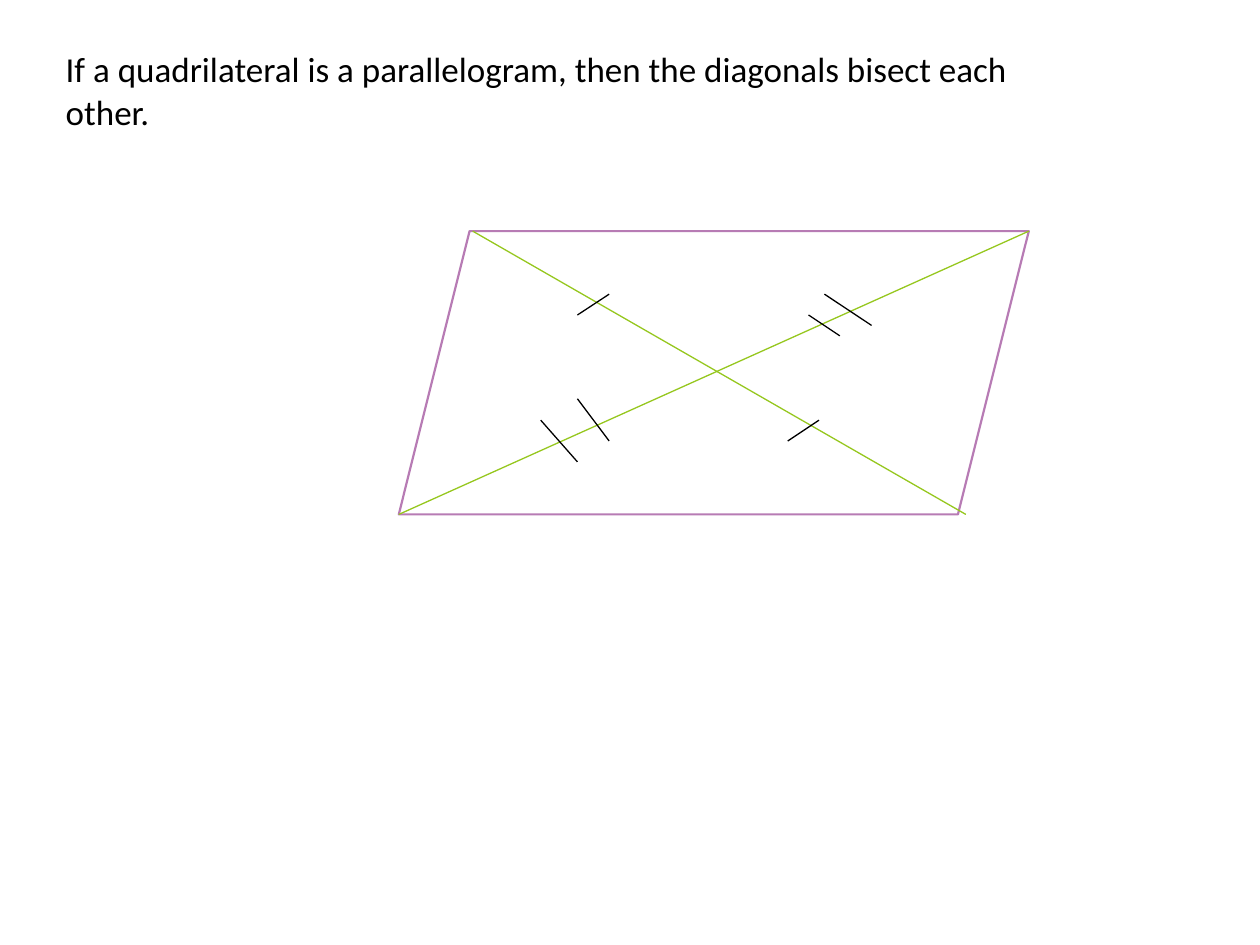
"""Builds a slide on the diagonals of a parallelogram."""
from lxml import etree
from pptx import Presentation
from pptx.dml.color import RGBColor
from pptx.enum.shapes import MSO_CONNECTOR, MSO_SHAPE
from pptx.enum.text import MSO_ANCHOR, MSO_AUTO_SIZE, PP_ALIGN
from pptx.oxml.ns import qn
from pptx.util import Cm, Pt

STRAIGHT = MSO_CONNECTOR.STRAIGHT
PARALLELOGRAM = MSO_SHAPE.PARALLELOGRAM
TOP = MSO_ANCHOR.TOP
NO_AUTOFIT = MSO_AUTO_SIZE.NONE
LEFT = PP_ALIGN.LEFT
TITLE_ONLY = 5

BLACK = "000000"
WHITE = "FFFFFF"
PURPLE = "B77BB4"
GREEN = "96C71E"


def color(value):
    """Return the colour for a hex string."""
    return RGBColor.from_string(value)


class Sketch:
    """Holds the text style and the current page."""

    def __init__(self, page, font="Calibri", size=20):
        """Keep the page and its text style."""
        self.page, self.font, self.size = page, font, size

    def title(self, text, left, top, width, height):
        """Place and format the title."""
        box = self.page.shapes.title
        box.left, box.top = Cm(left), Cm(top)
        box.width, box.height = Cm(width), Cm(height)
        frame = box.text_frame
        frame.text = text
        frame.word_wrap = True
        frame.auto_size = NO_AUTOFIT
        frame.vertical_anchor = TOP
        para = frame.paragraphs[0]
        para.alignment = LEFT
        para.font.name, para.font.size = self.font, Pt(self.size)
        para.font.color.rgb = color(BLACK)

    def parallelogram(self, left, top, width, height):
        """Draw the outlined parallelogram."""
        shape = self.page.shapes.add_shape(
            PARALLELOGRAM, Cm(left), Cm(top), Cm(width), Cm(height))
        shape.shadow.inherit = False
        shape.fill.solid()
        shape.fill.fore_color.rgb = color(WHITE)
        shape.line.color.rgb = color(PURPLE)
        shape.line.width = Pt(1.25)

    def line(self, ends, shade):
        """Draw a thin line between two points."""
        connector = self.page.shapes.add_connector(STRAIGHT, *map(Cm, ends))
        connector.line.color.rgb = color(shade)
        connector.line.width = Pt(0.75)
        etree.SubElement(connector._element.spPr, qn("a:effectLst"))


def main():
    """Build and save the deck."""
    deck = Presentation()
    deck.slide_width, deck.slide_height = Cm(25.4), Cm(19.05)
    sketch = Sketch(deck.slides.add_slide(deck.slide_layouts[TITLE_ONLY]))
    sketch.title("If a quadrilateral is a parallelogram, then the diagonals "
                 "bisect each other.", 1.07, 0.84, 19.69, 1.96)

    left, top, width, height = 8.04, 4.66, 12.7, 5.71
    right, bottom = left + width, top + height
    sketch.parallelogram(left, top, width, height)
    diagonals = [(9.53, top, 19.47, bottom), (left, bottom, right, top)]
    for diagonal in diagonals:
        sketch.line(diagonal, GREEN)

    single_ticks = [(11.64, 6.35, 12.28, 5.93), (15.88, 8.89, 16.51, 8.47)]
    double_ticks = [(10.9, 8.47, 11.64, 9.31), (11.64, 8.04, 12.28, 8.89),
                    (16.3, 6.35, 16.93, 6.77), (16.62, 5.93, 17.57, 6.56)]
    for tick in single_ticks + double_ticks:
        sketch.line(tick, BLACK)
    deck.save("out.pptx")


if __name__ == "__main__":
    main()
